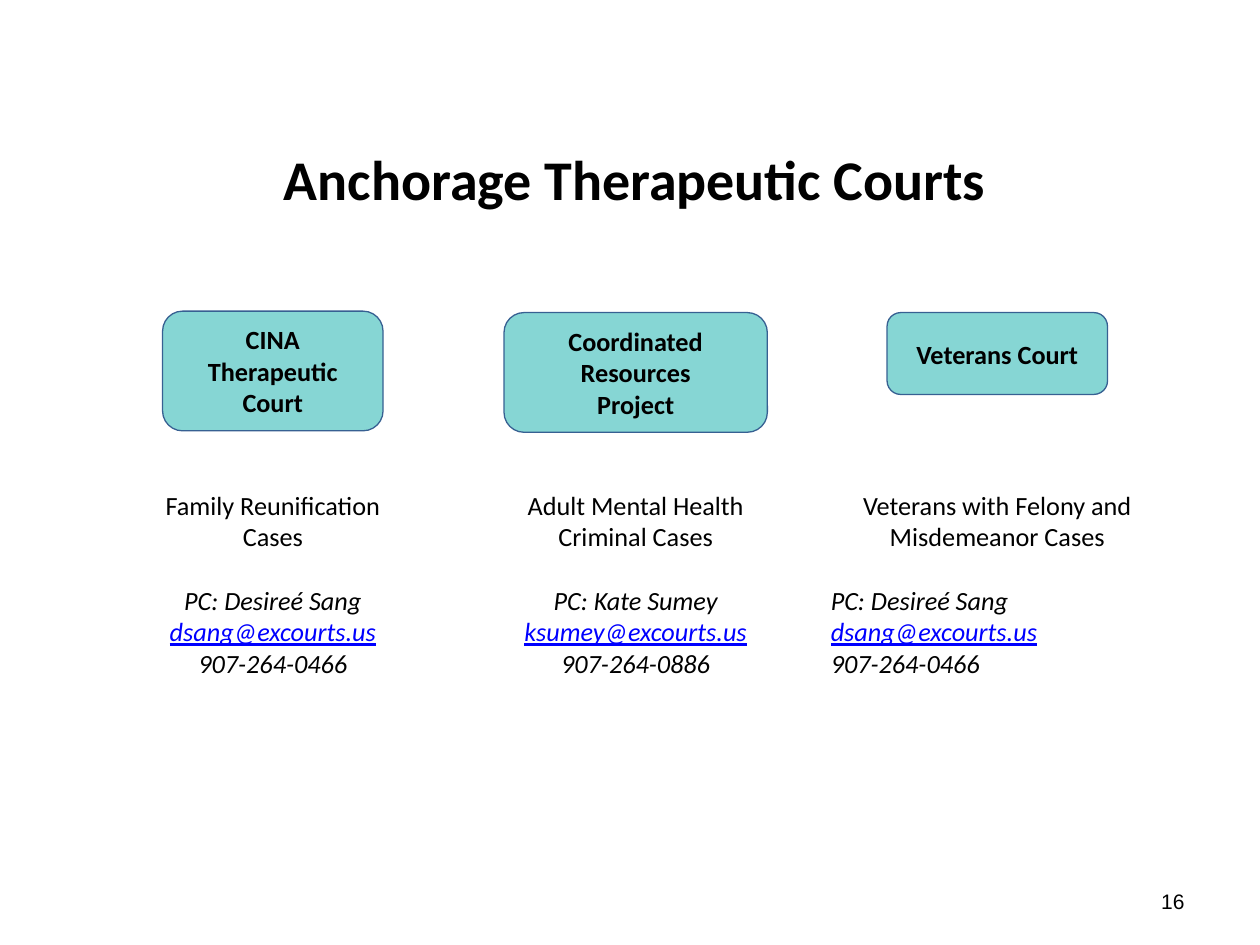
from dataclasses import dataclass

from pptx import Presentation
from pptx.dml.color import RGBColor
from pptx.enum.shapes import MSO_SHAPE
from pptx.enum.text import MSO_ANCHOR, PP_ALIGN
from pptx.util import Pt

# Content
TITLE = "Anchorage Therapeutic Courts"
PAGE_NUMBER = "16"
# Each box is (left, top, width, height) in points
COURTS = [
    dict(name=["CINA Therapeutic Court"], name_box=(92.9, 177.8, 126, 68.4),
         cases="Family Reunification Cases", details_width=149.8,
         contact=("PC: Desireé Sang", "dsang@excourts.us", "907-264-0466"),
         contact_align=PP_ALIGN.CENTER),
    dict(name=["Coordinated Resources", "Project"], name_box=(288, 178.6, 150.5, 68.4),
         cases="Adult Mental Health Criminal Cases", details_width=174.2,
         contact=("PC: Kate Sumey", "ksumey@excourts.us", "907-264-0886"),
         contact_align=PP_ALIGN.CENTER),
    dict(name=["Veterans Court"], name_box=(506.9, 178.6, 126, 46.8),
         cases="Veterans with Felony and Misdemeanor Cases", details_width=204.5,
         contact=("PC: Desireé Sang", "dsang@excourts.us", "907-264-0466"),
         contact_align=PP_ALIGN.LEFT),
]
DETAILS_TOP, DETAILS_HEIGHT = 275.8, 116.6


@dataclass(frozen=True)
class Theme:
    font: str = "Calibri"
    number_font: str = "Arial"
    text: str = "000000"
    link: str = "0000FF"
    fill: str = "86D6D4"
    line: str = "376092"
    title_size: float = 32
    body_size: float = 15
    number_size: float = 12
    contact_gap: float = 18.3


THEME = Theme()


def write(frame, text, *, first=False, size=THEME.body_size, font=THEME.font,
          color=THEME.text, bold=False, italic=False, underline=False,
          align=PP_ALIGN.CENTER, before=0):
    """Write one formatted paragraph into a text frame."""
    paragraph = frame.paragraphs[0] if first else frame.add_paragraph()
    paragraph.alignment = align
    paragraph.space_before = Pt(before)
    run = paragraph.add_run()
    run.text = text
    run.font.size, run.font.name = Pt(size), font
    run.font.bold, run.font.italic, run.font.underline = bold, italic, underline
    run.font.color.rgb = RGBColor.from_string(color)


def add_text_area(slide, box, anchor=MSO_ANCHOR.TOP):
    frame = slide.shapes.add_textbox(*map(Pt, box)).text_frame
    frame.word_wrap = True
    frame.vertical_anchor = anchor
    return frame


def add_court_name(slide, court):
    plate = slide.shapes.add_shape(MSO_SHAPE.ROUNDED_RECTANGLE, *map(Pt, court["name_box"]))
    plate.shadow.inherit = False
    plate.fill.solid()
    plate.fill.fore_color.rgb = RGBColor.from_string(THEME.fill)
    plate.line.color.rgb = RGBColor.from_string(THEME.line)
    plate.line.width = Pt(0.75)
    plate.text_frame.word_wrap = True
    plate.text_frame.vertical_anchor = MSO_ANCHOR.MIDDLE
    for index, line in enumerate(court["name"]):
        write(plate.text_frame, line, first=index == 0, bold=True)


def add_court_details(slide, court):
    # Details are centred under the court's name
    left, _, name_width, _ = court["name_box"]
    width = court["details_width"]
    details = add_text_area(
        slide, (left + (name_width - width) / 2, DETAILS_TOP, width, DETAILS_HEIGHT))
    write(details, court["cases"], first=True)
    coordinator, email, phone = court["contact"]
    contact_style = dict(italic=True, align=court["contact_align"])
    write(details, coordinator, before=THEME.contact_gap, **contact_style)
    write(details, email, color=THEME.link, underline=True, **contact_style)
    write(details, phone, **contact_style)


def main():
    deck = Presentation()
    deck.slide_width, deck.slide_height = Pt(720), Pt(540)
    slide = deck.slides.add_slide(deck.slide_layouts[5])

    # Title
    title = slide.shapes.title
    title.left, title.top, title.width, title.height = map(Pt, (74.9, 72, 576, 59.8))
    title.text_frame.vertical_anchor = MSO_ANCHOR.MIDDLE
    write(title.text_frame, TITLE, first=True, size=THEME.title_size, bold=True)

    # Courts
    for court in COURTS:
        add_court_name(slide, court)
        add_court_details(slide, court)

    # Page number
    number = add_text_area(slide, (516.2, 500.4, 167.8, 28.8), MSO_ANCHOR.MIDDLE)
    write(number, PAGE_NUMBER, first=True, size=THEME.number_size,
          font=THEME.number_font, align=PP_ALIGN.RIGHT)

    deck.save("out.pptx")


if __name__ == "__main__":
    main()
